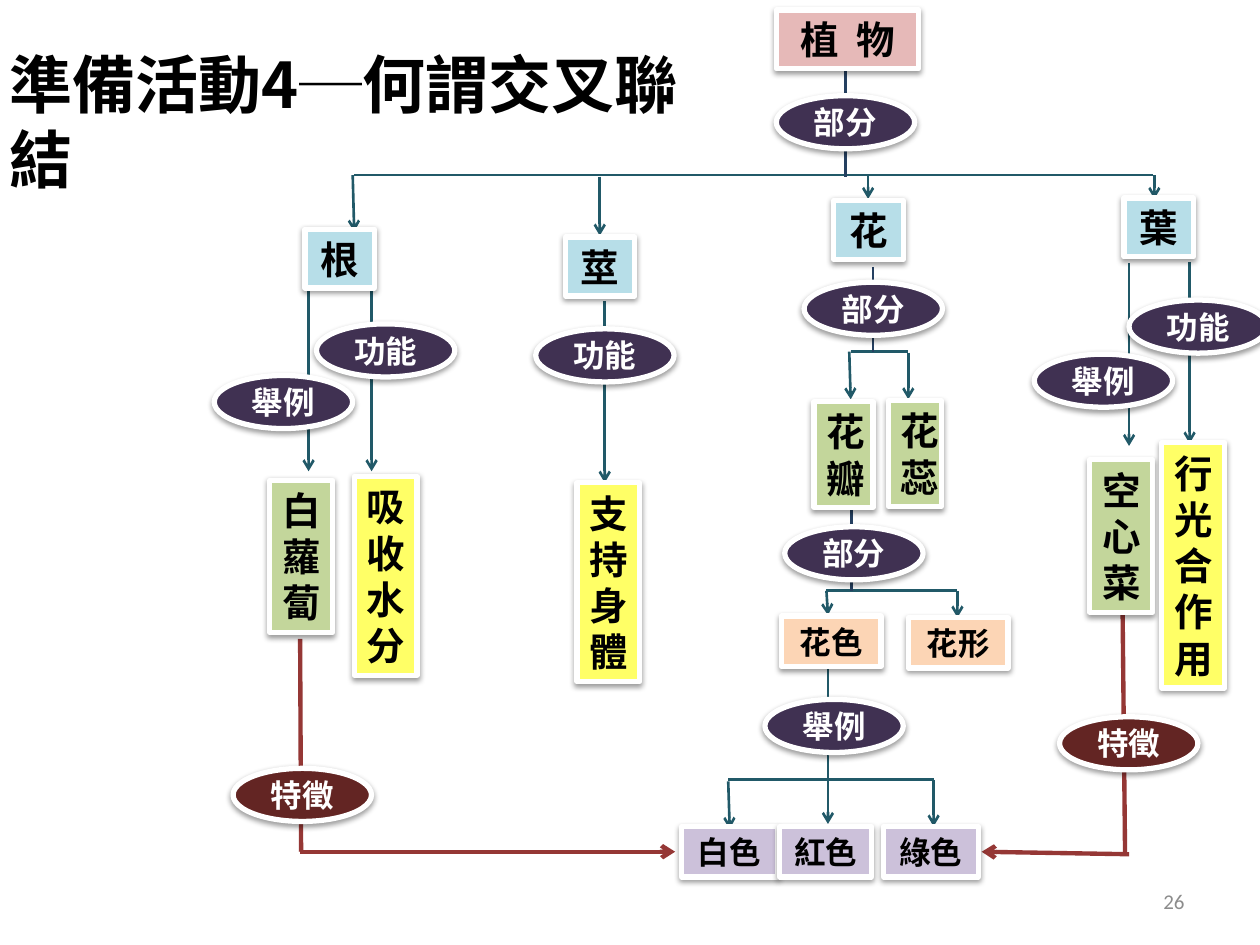
"""Build a concept map of a plant that explains cross links."""
from lxml.etree import SubElement
from pptx import Presentation
from pptx.dml.color import RGBColor
from pptx.enum.shapes import MSO_CONNECTOR, MSO_SHAPE
from pptx.enum.text import MSO_ANCHOR, MSO_AUTO_SIZE, PP_ALIGN
from pptx.oxml.ns import qn
from pptx.util import Cm, Pt

BLACK = RGBColor(0x00, 0x00, 0x00)
WHITE = RGBColor(0xFF, 0xFF, 0xFF)
GREY = RGBColor(0x8C, 0x8C, 0x8C)
PINK = RGBColor(0xE6, 0xB9, 0xB8)
BLUE = RGBColor(0xB7, 0xDE, 0xE8)
GREEN = RGBColor(0xC3, 0xD6, 0x9B)
YELLOW = RGBColor(0xFF, 0xFF, 0x66)
ORANGE = RGBColor(0xFC, 0xD5, 0xB5)
LILAC = RGBColor(0xCC, 0xC1, 0xDA)
PURPLE = RGBColor(0x40, 0x31, 0x52)
MAROON = RGBColor(0x63, 0x25, 0x23)
TEAL = RGBColor(0x21, 0x59, 0x68)
NAVY = RGBColor(0x25, 0x40, 0x61)
RED = RGBColor(0x95, 0x37, 0x35)

BRANCHES = [
    (7.14, 3.53, 23.24), (17.15, 7.09, 18.31),
    (14.68, 15.72, 18.82), (16.66, 11.91, 19.30),
]
ARROWS = [
    (7.11, 3.53, 7.14, 4.67), (12.09, 3.56, 12.09, 4.75),
    (17.50, 3.53, 17.50, 4.01), (23.27, 3.53, 23.27, 4.01),
    (6.22, 5.82, 6.22, 9.50), (7.49, 5.82, 7.49, 9.50),
    (12.19, 6.07, 12.19, 9.73),
    (22.76, 5.31, 22.76, 8.99), (23.98, 5.28, 23.98, 8.94),
    (17.12, 7.09, 17.15, 8.05), (18.31, 7.11, 18.31, 8.05),
    (16.66, 11.91, 16.69, 12.40), (19.30, 11.91, 19.30, 12.45),
    (14.68, 15.75, 14.71, 16.71), (16.69, 13.44, 16.69, 16.61),
    (18.82, 15.72, 18.82, 16.66),
]
STEMS = [(17.04, 1.40, 3.56), (17.60, 5.38, 7.09), (17.17, 9.73, 11.91)]
CROSS_LINKS = [
    (6.05, 12.88, 6.07, 17.17, False), (6.05, 17.17, 13.61, 17.17, True),
    (22.63, 12.29, 22.68, 17.22, False), (22.76, 17.22, 19.79, 17.17, True),
]
PLANT_PARTS = [("根", 6.15, 4.62), ("莖", 11.40, 4.78), ("花", 16.81, 4.04), ("葉", 22.66, 3.99)]
COLUMNS = [
    ("白蘿蔔", 5.44, 9.68, 1.27, GREEN), ("空心菜", 21.97, 9.27, 1.27, GREEN),
    ("花瓣", 16.41, 8.10, 1.19, GREEN), ("花蕊", 17.91, 8.08, 1.07, GREEN),
    ("吸收水分", 7.14, 9.60, 1.27, YELLOW), ("支持身體", 11.63, 9.73, 1.27, YELLOW),
    ("行光合作用", 23.42, 8.92, 1.27, YELLOW),
]
SMALL_BOXES = [
    ("花色", 15.75, 12.42, 2.01, ORANGE), ("花形", 18.31, 12.45, 2.01, ORANGE),
    ("白色", 13.74, 16.66, 1.93, LILAC), ("紅色", 15.72, 16.66, 1.85, LILAC),
    ("綠色", 17.81, 16.66, 1.91, LILAC),
]
LINK_WORDS = [
    ("舉例", 4.32, 7.57, PURPLE), ("功能", 6.38, 6.53, PURPLE),
    ("功能", 10.80, 6.63, PURPLE), ("部分", 15.65, 1.93, PURPLE),
    ("部分", 16.21, 5.69, PURPLE), ("部分", 15.82, 10.62, PURPLE),
    ("舉例", 15.42, 14.10, PURPLE), ("舉例", 20.85, 7.14, PURPLE),
    ("功能", 22.76, 6.05, PURPLE), ("特徵", 4.70, 15.49, MAROON),
    ("特徵", 21.36, 14.45, MAROON),
]


class ConceptMap:
    """Hold the style and the current slide, and draw each kind of element."""

    font = "Noto Sans CJK SC"
    large, small = 22, 18

    def __init__(self, slide):
        self.slide = slide

    def add_text(self, shape, text, size, color, align, bold=True, font=None,
                 anchor=MSO_ANCHOR.MIDDLE):
        """Put one styled run into a shape."""
        frame = shape.text_frame
        frame.word_wrap = True
        frame.vertical_anchor = anchor
        paragraph = frame.paragraphs[0]
        paragraph.alignment = align
        run = paragraph.add_run()
        run.text = text
        run.font.name = font or self.font
        run.font.size = Pt(size)
        run.font.bold = bold
        run.font.color.rgb = color
        SubElement(run._r.get_or_add_rPr(), qn("a:ea"), typeface=font or self.font)

    def label(self, text, left, top, width, height, size, color, align, **style):
        """Add a plain text box."""
        shape = self.slide.shapes.add_textbox(Cm(left), Cm(top), Cm(width), Cm(height))
        self.add_text(shape, text, size, color, align, **style)

    def node(self, kind, left, top, width, height, fill):
        """Add a filled shape with a white rim and a soft shadow."""
        shape = self.slide.shapes.add_shape(kind, Cm(left), Cm(top), Cm(width), Cm(height))
        shape.shadow.inherit = False
        shape.fill.solid()
        shape.fill.fore_color.rgb = fill
        shape.line.color.rgb = WHITE
        shape.line.width = Pt(3)
        effects = shape._element.spPr.find(qn("a:effectLst"))
        shadow = SubElement(effects, qn("a:outerShdw"), blurRad="40000", dist="20000",
                            dir="5400000", rotWithShape="0")
        color = SubElement(shadow, qn("a:srgbClr"), val="000000")
        SubElement(color, qn("a:alpha"), val="38000")
        return shape

    def box(self, text, left, top, width, fill, size=large, lines=1, align=PP_ALIGN.CENTER):
        """Add a concept box as tall as its lines."""
        height = 0.25 + lines * size / 23.4
        shape = self.node(MSO_SHAPE.RECTANGLE, left, top, width, height, fill)
        self.add_text(shape, text, size, BLACK, align)
        shape.text_frame.auto_size = MSO_AUTO_SIZE.SHAPE_TO_FIT_TEXT

    def oval(self, text, left, top, fill):
        """Add a linking word."""
        shape = self.node(MSO_SHAPE.OVAL, left, top, 2.79, 1.07, fill)
        self.add_text(shape, text, self.small, WHITE, PP_ALIGN.CENTER)

    def line(self, x1, y1, x2, y2, color=TEAL, width=1.5, arrow=False):
        """Add a straight line, with an arrowhead at its end if wanted."""
        connector = self.slide.shapes.add_connector(
            MSO_CONNECTOR.STRAIGHT, Cm(x1), Cm(y1), Cm(x2), Cm(y2))
        connector.line.color.rgb = color
        connector.line.width = Pt(width)
        properties = connector._element.spPr
        if arrow:
            SubElement(properties.find(qn("a:ln")), qn("a:tailEnd"), type="arrow")
        SubElement(properties, qn("a:effectLst"))


def main():
    """Build and save the slide."""
    presentation = Presentation()
    presentation.slide_width, presentation.slide_height = Cm(25.4), Cm(19.05)
    concept_map = ConceptMap(presentation.slides.add_slide(presentation.slide_layouts[6]))

    concept_map.label("準備活動4─何謂交叉聯結", -0.05, 0.79, 15.16, 3.23, 36, BLACK,
                      PP_ALIGN.LEFT, anchor=MSO_ANCHOR.TOP)
    for left, y, right in BRANCHES:
        concept_map.line(left, y, right, y)
    for ends in ARROWS:
        concept_map.line(*ends, arrow=True)
    for x, top, bottom in STEMS:
        concept_map.line(x, top, x, bottom, NAVY)
    for *ends, arrow in CROSS_LINKS:
        concept_map.line(*ends, RED, 2.5, arrow)

    concept_map.box("植  物", 15.65, 0.20, 2.87, PINK)
    for text, left, top in PLANT_PARTS:
        concept_map.box(text, left, top, 1.40, BLUE)
    for text, left, top, width, fill in COLUMNS:
        align = PP_ALIGN.LEFT if fill == YELLOW else PP_ALIGN.CENTER
        concept_map.box(text, left, top, width, fill, lines=len(text), align=align)
    for text, left, top, width, fill in SMALL_BOXES:
        concept_map.box(text, left, top, width, fill, ConceptMap.small)
    for link_word in LINK_WORDS:
        concept_map.oval(*link_word)
    concept_map.label("26", 18.21, 17.65, 5.92, 1.02, 12, GREY, PP_ALIGN.RIGHT,
                      bold=False, font="Calibri")
    presentation.save("out.pptx")


if __name__ == "__main__":
    main()
